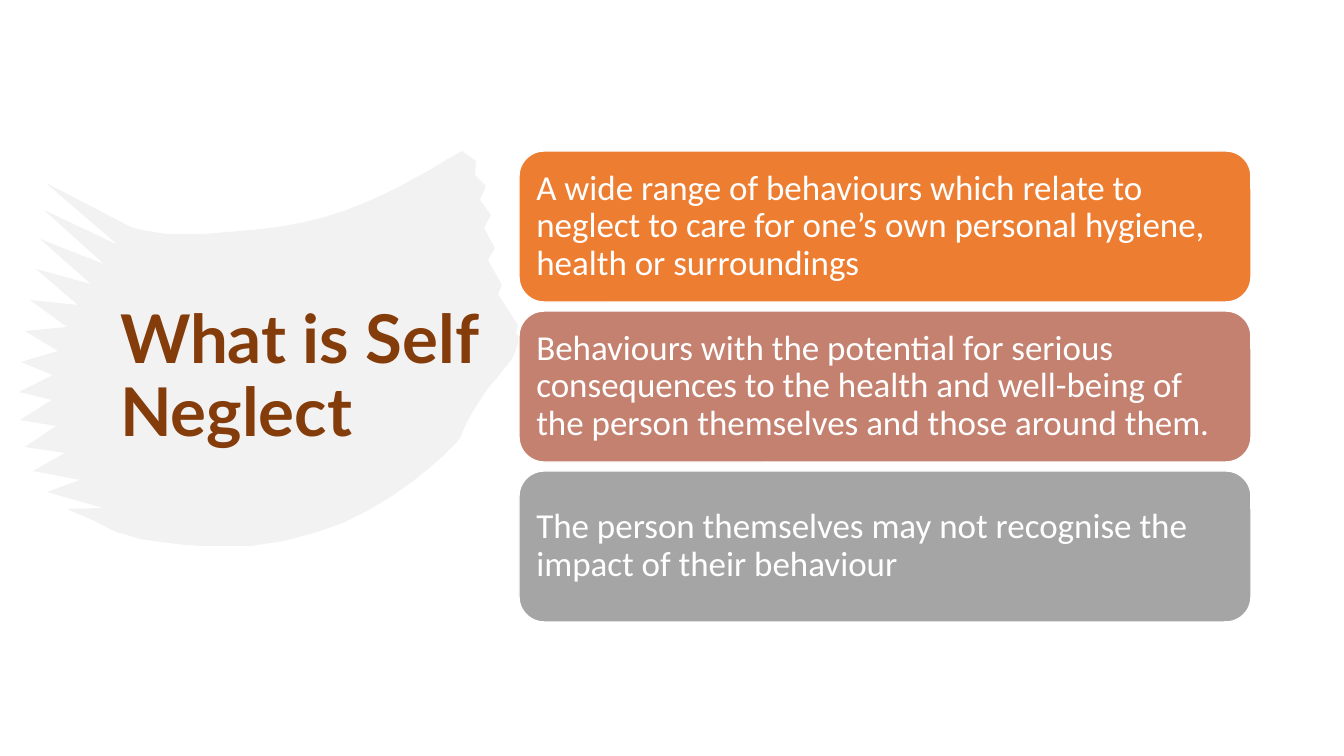
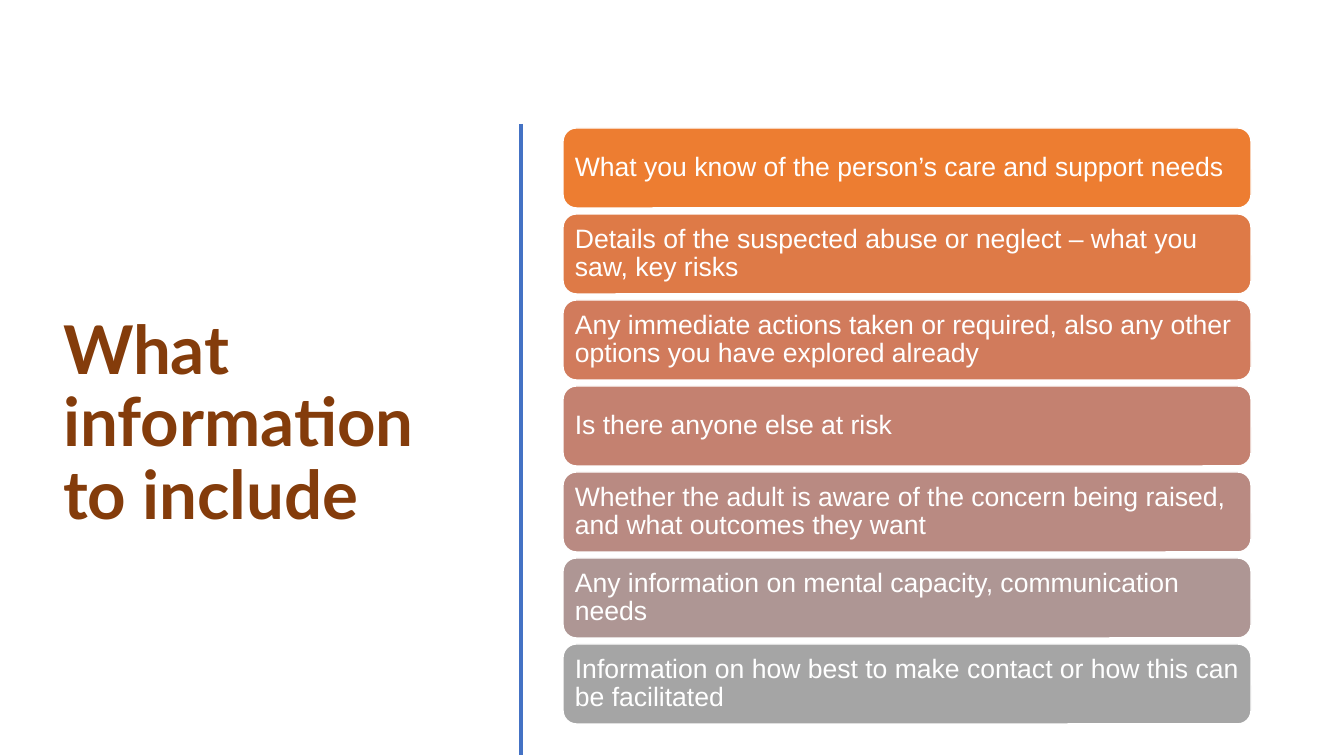
import pptx
import pptx.util
import pptx.dml.color
import pptx.enum.shapes
import pptx.enum.text
import pptx.oxml.ns
from lxml import etree

PX = 914400 / 100.8
WIDE, HIGH = 1344, 756

THEME = {
    "title": {"font": "Lato", "size": 48, "color": "843C0B", "bold": True},
    "white": "FFFFFF",
    "brush": "E7E6E6",
    "rule": "4472C4",
    "ramp": ["ED7D31", "DE7A47", "D17B5C", "C48170", "B98A82", "AE9694", "A5A5A5"],
}

SLIDES = [
    {
        "title": "What is Self Neglect",
        "at": (110, 75, 385, 606),
        "bars": {"left": 519, "top": 151, "width": 732, "height": 151, "gap": 9},
        "style": {"font": "Calibri", "size": 25, "inset": 10},
        "brush": True,
        "items": [
            "A wide range of behaviours which relate to neglect to care for one’s own "
            "personal hygiene, health or surroundings",
            "Behaviours with the potential for serious consequences to the health and "
            "well-being of the person themselves and those around them.",
            "The person themselves may not recognise the impact of their behaviour",
        ],
    },
    {
        "title": "What information to include",
        "at": (53, 117, 434, 616),
        "bars": {"left": 563, "top": 128, "width": 688, "height": 80, "gap": 6},
        "style": {"font": "Arial", "size": 19, "inset": 8},
        "rule": {"x": 521, "top": 124, "end": 755},
        "items": [
            "What you know of the person’s care and support needs",
            "Details of the suspected abuse or neglect – what you saw, key risks",
            "Any immediate actions taken or required, also any other options you have "
            "explored already",
            "Is there anyone else at risk",
            "Whether the adult is aware of the concern being raised, and what outcomes "
            "they want",
            "Any information on mental capacity, communication needs",
            "Information on how best to make contact or how this can be facilitated",
        ],
    },
]

# Each curve is a start, two control points and an end.
BRUSH = {
    "right tips": [(476, 161), (500, 200), (482, 255), (518, 325)],
    "right roots": [(475, 175), (488, 215), (476, 265), (516, 333)],
    "right side": [(518, 335), (522, 365), (485, 375), (460, 438)],
    "base": [(460, 438), (460, 439), (375, 537), (251, 546)],
    "heel": [(251, 546), (190, 548), (125, 542), (97, 522)],
    "left tips": [(67, 509), (-25, 447), (44, 287), (46, 183)],
    "left roots": [(103, 508), (-3, 395), (81, 295), (131, 227)],
    "top left": [(131, 227), (170, 240), (225, 233), (262, 229)],
    "top right": [(262, 229), (345, 222), (403, 185), (462, 151)],
}


def emu(px):
    return pptx.util.Emu(round(px * PX))


def rgb(code):
    return pptx.dml.color.RGBColor.from_string(code)


def curve(name, count=12):
    """Return count evenly timed points on a named cubic curve."""
    points = []
    for i in range(count):
        t = i / (count - 1)
        u = 1 - t
        parts = (u ** 3, 3 * u * u * t, 3 * u * t * t, t ** 3)
        points.append(tuple(
            round(sum(part * value for part, value in zip(parts, axis)))
            for axis in zip(*BRUSH[name])))
    return points


def comb(side, count):
    """Zigzag between the tips and the roots of the bristles on one side."""
    pairs = zip(curve(side + " tips", count), curve(side + " roots", count))
    return [point for pair in pairs for point in pair]


def outline():
    """Go clockwise round the brush stroke from its top right corner."""
    points = comb("right", 6)
    for name in ("right side", "base", "heel"):
        points += curve(name)
    points += comb("left", 13)
    for name in ("top left", "top right"):
        points += curve(name)
    return points


def write(shape, text, font, size, color, bold=False, inset=10):
    """Put one left-aligned, vertically centred paragraph in a shape."""
    frame = shape.text_frame
    frame.word_wrap = True
    frame.auto_size = pptx.enum.text.MSO_AUTO_SIZE.NONE
    frame.vertical_anchor = pptx.enum.text.MSO_ANCHOR.MIDDLE
    frame.margin_left = frame.margin_right = emu(inset)
    frame.margin_top = frame.margin_bottom = emu(inset / 2)
    para = frame.paragraphs[0]
    para.alignment = pptx.enum.text.PP_ALIGN.LEFT
    para.line_spacing = 0.9
    run = para.add_run()
    run.text = text
    run.font.name = font
    run.font.size = pptx.util.Pt(size)
    run.font.bold = bold
    run.font.color.rgb = rgb(color)


def paint(shape, color):
    shape.shadow.inherit = False
    shape.fill.solid()
    shape.fill.fore_color.rgb = rgb(color)


def add_title(slide, text, at):
    title = slide.shapes.title
    title.left, title.top, title.width, title.height = map(emu, at)
    write(title, text, **THEME["title"])


def add_brush(slide):
    """Draw the half-clear brush stroke behind the title."""
    first, *rest = outline()
    pen = slide.shapes.build_freeform(*first, scale=PX)
    pen.add_line_segments(rest, close=True)
    brush = pen.convert_to_shape()
    paint(brush, THEME["brush"])
    brush.line.fill.background()
    tint = brush.element.find(".//" + pptx.oxml.ns.qn("a:srgbClr"))
    etree.SubElement(tint, pptx.oxml.ns.qn("a:alpha"), val="50000")
    slide.shapes.title.element.addprevious(brush.element)


def add_rule(slide, x, top, end):
    rule = slide.shapes.add_connector(
        pptx.enum.shapes.MSO_CONNECTOR.STRAIGHT, emu(x), emu(top), emu(x), emu(end))
    rule.line.color.rgb = rgb(THEME["rule"])
    rule.line.width = pptx.util.Pt(2.25)
    etree.SubElement(rule.element.spPr, pptx.oxml.ns.qn("a:effectLst"))


def add_bars(slide, items, style, left, top, width, height, gap):
    """Stack the items as bars, their colours spread over the whole ramp."""
    step = (len(THEME["ramp"]) - 1) // (len(items) - 1)
    for i, text in enumerate(items):
        bar = slide.shapes.add_shape(
            pptx.enum.shapes.MSO_SHAPE.ROUNDED_RECTANGLE,
            emu(left), emu(top + i * (height + gap)), emu(width), emu(height))
        paint(bar, THEME["ramp"][i * step])
        bar.line.color.rgb = rgb(THEME["white"])
        bar.line.width = pptx.util.Pt(1)
        write(bar, text, color=THEME["white"], **style)


def main():
    deck = pptx.Presentation()
    deck.slide_width, deck.slide_height = emu(WIDE), emu(HIGH)
    for data in SLIDES:
        slide = deck.slides.add_slide(deck.slide_layouts[5])
        add_title(slide, data["title"], data["at"])
        if "brush" in data:
            add_brush(slide)
        if "rule" in data:
            add_rule(slide, **data["rule"])
        add_bars(slide, data["items"], data["style"], **data["bars"])
    deck.save("out.pptx")


if __name__ == "__main__":
    main()
